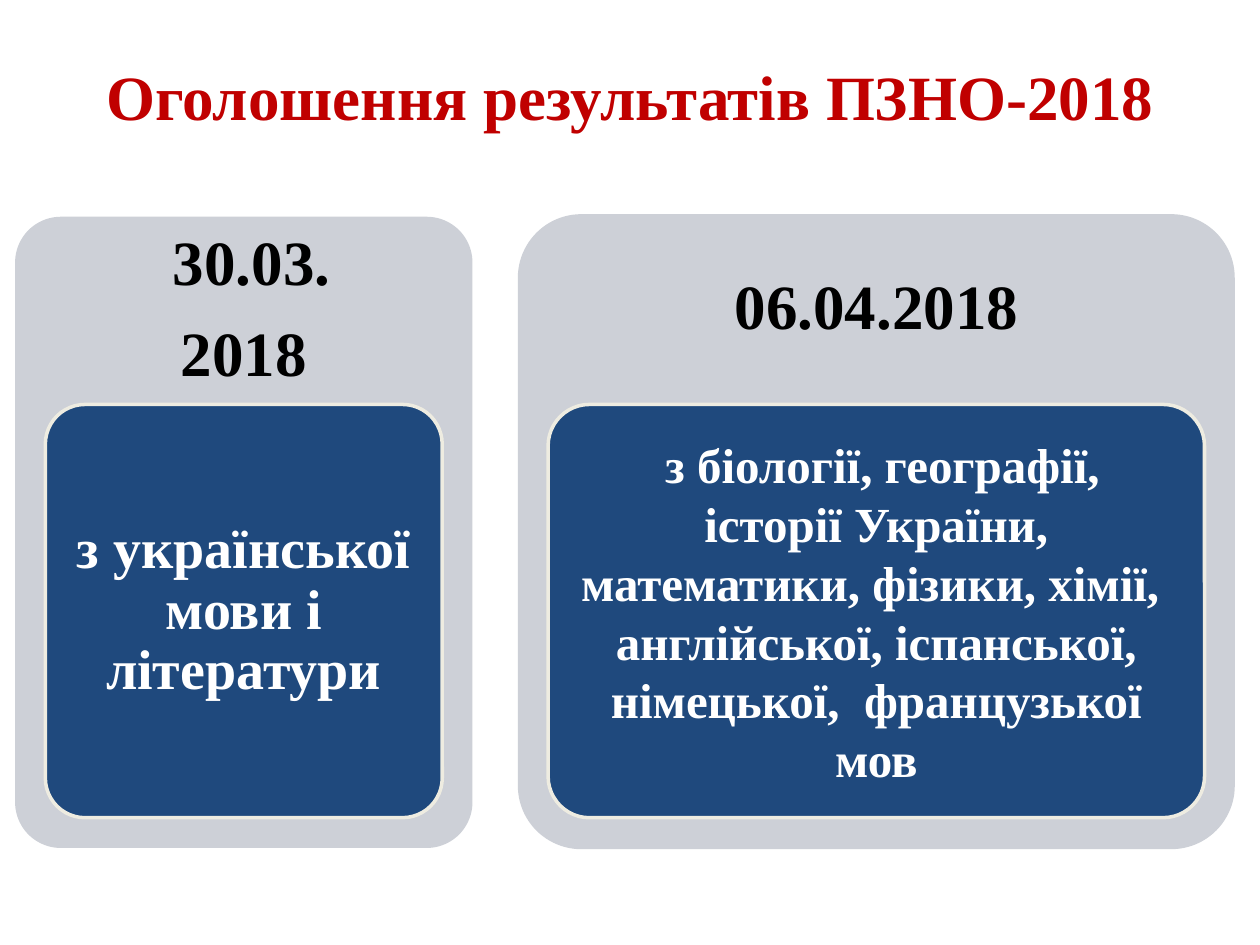
import pptx
import pptx.util
import pptx.dml.color
import pptx.enum.shapes
import pptx.enum.text

Inches, Pt = pptx.util.Inches, pptx.util.Pt

FONT = "Times New Roman"
COLORS = {"title": "C00000", "panel": "CDD0D7", "card": "1F497D",
          "edge": "EEECE1", "date": "000000", "body": "FFFFFF"}

TITLE = "Оголошення результатів ПЗНО-2018"
PANELS = [
    {"box": (0.12, 1.72, 3.63, 5.01), "dates": [" 30.03.", "2018"],
     "body": ["з української мови і літератури"],
     "size": 32, "space": 0.9, "pad": (0.09, 0.07)},
    {"box": (4.11, 1.7, 5.69, 5.04), "dates": ["06.04.2018"],
     "body": [" з біології, географії,", "історії України,",
              "математики, фізики, хімії, ",
              "англійської, іспанської, німецької,  французької мов"],
     "size": 28, "space": 1.0, "pad": (0.07, 0.05)},
]
CARD_TOP, CARD_HIGH, SIDE = 3.21, 3.28, 0.24


def color(name):
    """Return a palette colour."""
    return pptx.dml.color.RGBColor.from_string(COLORS[name])


def write(shape, lines, size, tint, pad, space=1.0, after=0):
    """Fill a shape with bold, centred paragraphs."""
    frame = shape.text_frame
    frame.word_wrap = True
    frame.vertical_anchor = pptx.enum.text.MSO_ANCHOR.MIDDLE
    frame.margin_left = frame.margin_right = Inches(pad[0])
    frame.margin_top = frame.margin_bottom = Inches(pad[1])
    frame.text = "\n".join(lines)
    for para in frame.paragraphs:
        para.alignment = pptx.enum.text.PP_ALIGN.CENTER
        para.line_spacing = space
        para.space_after = Pt(after)
        para.font.name = FONT
        para.font.size = Pt(size)
        para.font.bold = True
        para.font.color.rgb = color(tint)


def add_text(slide, box):
    """Add a text box at a place given in inches."""
    return slide.shapes.add_textbox(*map(Inches, box))


def add_round(slide, box, fill, edge=None):
    """Add a rounded rectangle with an optional outline."""
    kind = pptx.enum.shapes.MSO_SHAPE.ROUNDED_RECTANGLE
    shape = slide.shapes.add_shape(kind, *map(Inches, box))
    shape.adjustments[0] = 0.1
    shape.shadow.inherit = False
    shape.fill.solid()
    shape.fill.fore_color.rgb = color(fill)
    if edge:
        shape.line.color.rgb = color(edge)
        shape.line.width = Pt(2)
    else:
        shape.line.fill.background()
    return shape


def add_panel(slide, panel):
    """Add a panel with its date on top and its subject card below."""
    left, top, wide, high = panel["box"]
    add_round(slide, panel["box"], "panel")
    date = add_text(slide, (left, top, wide, CARD_TOP - top))
    write(date, panel["dates"], 36, "date", (0.15, 0.15), 0.9, 12.6)
    card = add_round(slide, (left + SIDE, CARD_TOP, wide - 2 * SIDE, CARD_HIGH),
                     "card", "edge")
    write(card, panel["body"], panel["size"], "body", panel["pad"],
          panel["space"])


deck = pptx.Presentation()
deck.slide_width, deck.slide_height = Inches(10), Inches(7.5)
slide = deck.slides.add_slide(deck.slide_layouts[6])
for panel in PANELS:
    add_panel(slide, panel)
title = add_text(slide, (0.12, 0.13, 9.76, 1.25))
write(title, [TITLE], 36, "title", (0.1, 0.05))
deck.save("out.pptx")
